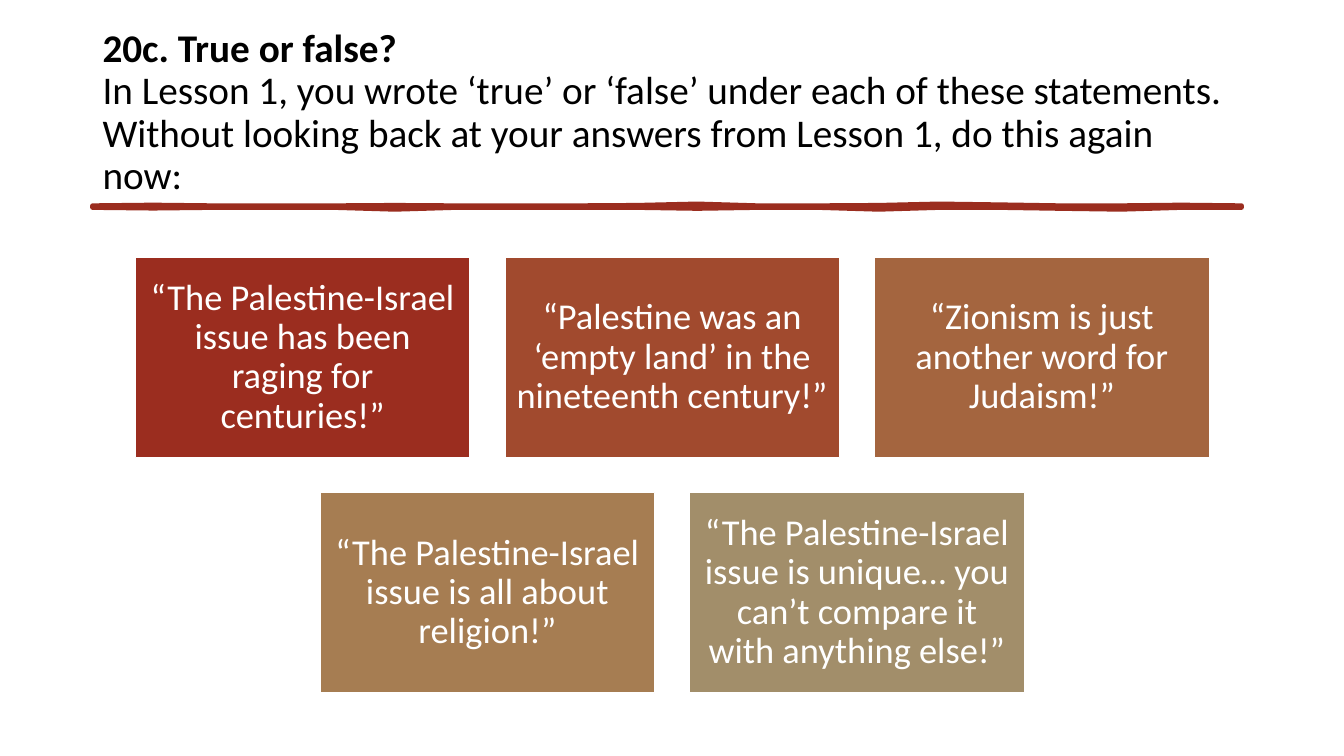
from dataclasses import dataclass

from pptx import Presentation
from pptx import util as u
from pptx.dml.color import RGBColor
from pptx.enum import shapes, text

BLACK = RGBColor(0x00, 0x00, 0x00)
WHITE = RGBColor(0xFF, 0xFF, 0xFF)
RUST = RGBColor(0x9B, 0x2D, 0x1F)
BRICK = RGBColor(0xA1, 0x4A, 0x2E)
COPPER = RGBColor(0xA4, 0x65, 0x3F)
BRONZE = RGBColor(0xA6, 0x7D, 0x52)
SAND = RGBColor(0xA2, 0x8E, 0x6A)
FONT = "Calibri"

WIDTH, HEIGHT = u.Inches(13.33), u.Inches(7.5)


def across(share: float) -> int:
    """Percent of the slide's width."""
    return round(WIDTH * share / 100)


def down(share: float) -> int:
    """Percent of the slide's height."""
    return round(HEIGHT * share / 100)


MARGIN = across(6.88)
TILE_W, TILE_H = across(24.9), down(26.53)
GAP = across(2.6)
TILES_TOP = down(34)
TILES_MIDDLE = across(50.02)

# Height of the brush stroke's edges along its length, in points
STROKE_TOP = (-.7, -1.2, -.7, -.7, -.7, -1, -.7, -.7, -.7, -1,
              -2, -.7, -.7, -1, -2, -1.4, -.7, -.7, -1.2, -.7)
STROKE_BOTTOM = (.7, 1.2, .7, .7, .7, 2, .7, .7, .7, .7,
                 1.4, .7, .7, 2, .7, .7, 1.4, 2, .7, .7)


@dataclass
class Statement:
    words: str
    fill: RGBColor


ROWS = (
    (Statement("“The Palestine-Israel issue has been raging for centuries!”", RUST),
     Statement("“Palestine was an ‘empty land’ in the nineteenth century!”", BRICK),
     Statement("“Zionism is just another word for Judaism!”", COPPER)),
    (Statement("“The Palestine-Israel issue is all about religion!”", BRONZE),
     Statement("“The Palestine-Israel issue is unique… you can’t compare it "
               "with anything else!”", SAND)),
)


def add_text(p, words: str, *, size: float, color: RGBColor, bold: bool = False,
             align=text.PP_ALIGN.LEFT) -> None:
    p.alignment = align
    p.line_spacing = 0.9
    r = p.add_run()
    r.text = words
    r.font.name, r.font.size, r.font.bold = FONT, u.Pt(size), bold
    r.font.color.rgb = color


def add_title(s) -> None:
    sp = s.shapes.title
    sp.left, sp.top = MARGIN, down(5.33)
    sp.width, sp.height = across(86.25), down(19.33)
    tf = sp.text_frame
    tf.word_wrap = True
    tf.auto_size = text.MSO_AUTO_SIZE.NONE
    tf.vertical_anchor = text.MSO_ANCHOR.MIDDLE
    p = tf.paragraphs[0]
    add_text(p, "20c. True or false?", size=28, color=BLACK, bold=True)
    p.add_line_break()
    add_text(p, "In Lesson 1, you wrote ‘true’ or ‘false’ under each of these statements. "
                "Without looking back at your answers from Lesson 1, do this again now:",
             size=28, color=BLACK)


def add_stroke(s) -> None:
    step = across(85.5) / (len(STROKE_TOP) - 1)
    middle = down(27.33)

    def edge(heights) -> list:
        return [(round(MARGIN + i * step), middle + u.Pt(h)) for i, h in enumerate(heights)]

    outline = edge(STROKE_TOP) + edge(STROKE_BOTTOM)[::-1]
    builder = s.shapes.build_freeform(*outline[0])
    builder.add_line_segments(outline[1:], close=True)
    sp = builder.convert_to_shape()
    sp.shadow.inherit = False
    sp.fill.solid()
    sp.fill.fore_color.rgb = RUST
    sp.line.color.rgb = RUST
    sp.line.width = u.Pt(3.25)


def add_tile(s, statement: Statement, left: int, top: int) -> None:
    sp = s.shapes.add_shape(shapes.MSO_SHAPE.RECTANGLE, left, top, TILE_W, TILE_H)
    sp.shadow.inherit = False
    sp.fill.solid()
    sp.fill.fore_color.rgb = statement.fill
    sp.line.color.rgb = WHITE
    sp.line.width = u.Pt(1)
    tf = sp.text_frame
    tf.word_wrap = True
    tf.vertical_anchor = text.MSO_ANCHOR.MIDDLE
    tf.margin_left = tf.margin_right = tf.margin_top = tf.margin_bottom = u.Inches(0.11)
    add_text(tf.paragraphs[0], statement.words, size=26, color=WHITE,
             align=text.PP_ALIGN.CENTER)


def main() -> None:
    prs = Presentation()
    prs.slide_width, prs.slide_height = WIDTH, HEIGHT
    s = prs.slides.add_slide(prs.slide_layouts[5])

    # Heading and brush stroke
    add_title(s)
    add_stroke(s)

    # Statements, each row centred
    for row, statements in enumerate(ROWS):
        row_width = len(statements) * (TILE_W + GAP) - GAP
        left = TILES_MIDDLE - row_width // 2
        for col, statement in enumerate(statements):
            add_tile(s, statement, left + col * (TILE_W + GAP),
                     TILES_TOP + row * (TILE_H + GAP))

    prs.save("out.pptx")


if __name__ == "__main__":
    main()
